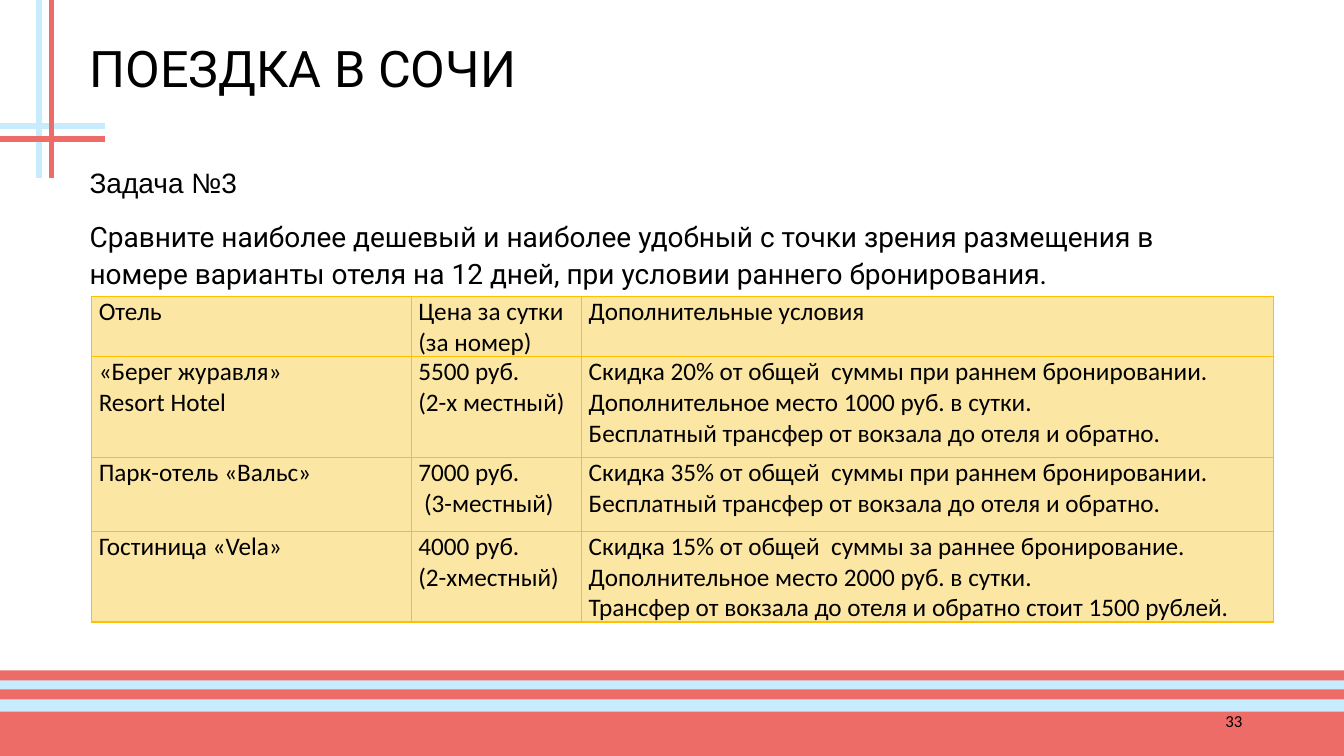
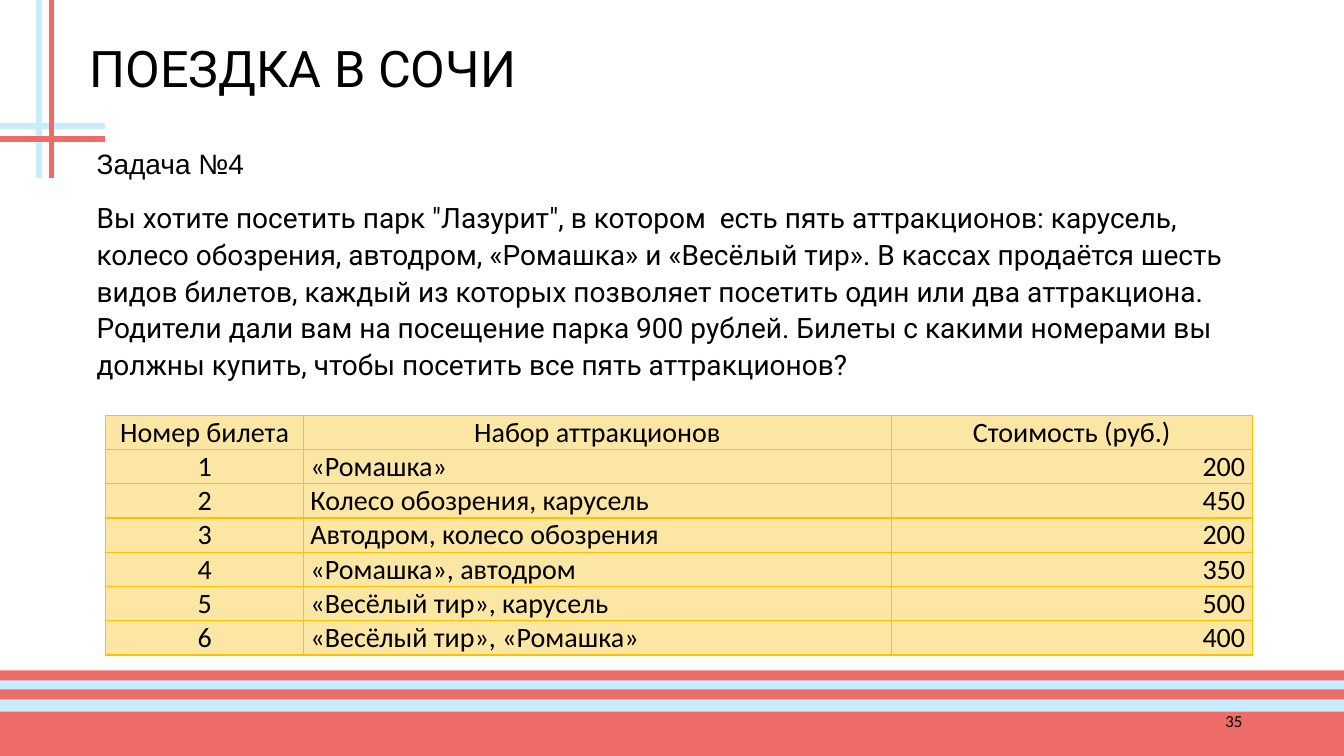
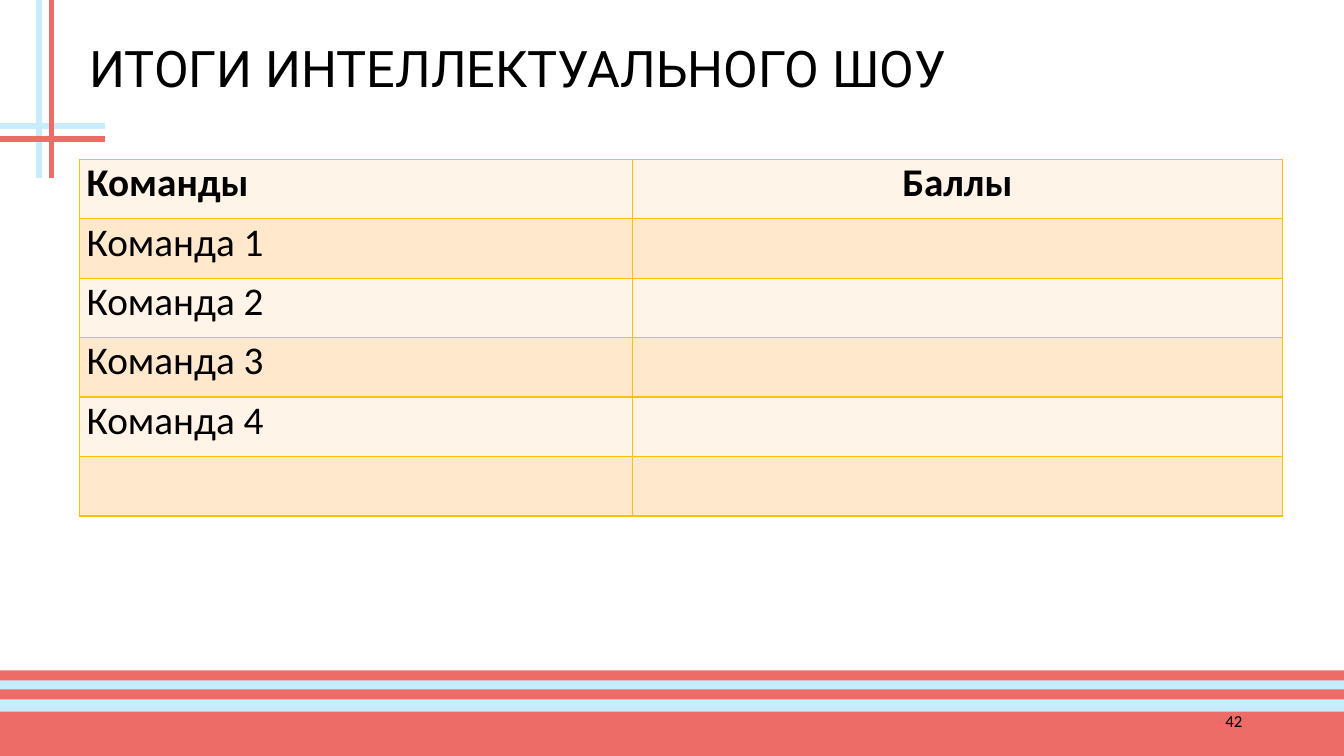
from pptx import Presentation
from pptx.dml.color import RGBColor
from pptx.enum.shapes import MSO_CONNECTOR, MSO_SHAPE
from pptx.enum.text import MSO_ANCHOR, PP_ALIGN
from pptx.oxml.ns import qn
from pptx.util import Inches, Pt
from lxml.etree import SubElement

COLORS = {
    "coral": "EE6C68", "sky": "C6ECFD", "black": "000000", "gold": "FFC000",
    "sand": "FCE6A3", "cream": "FFF4E7", "peach": "FFE8CC",
}
LEFT, CENTER, RIGHT = PP_ALIGN.LEFT, PP_ALIGN.CENTER, PP_ALIGN.RIGHT

# top, height, colour
BANDS = [(6.66, 0.86, "sky"), (7.06, 0.46, "coral"), (6.84, 0.1, "coral"), (6.65, 0.1, "coral")]
# x1, y1, x2, y2, colour
CROSS_LINES = [
    (0, 1.25, 1.04, 1.25, "sky"), (0.39, 0, 0.39, 1.77, "sky"),
    (0, 1.38, 1.04, 1.38, "coral"), (0.51, 0, 0.51, 1.77, "coral"),
]

TITLE_FORMAT = {"name": "Roboto", "size": Pt(36)}
HEADING_FORMAT = {"name": "Arial", "size": Pt(20)}
TASK_FORMAT = {"name": "Roboto", "size": Pt(20)}
NUMBER_FORMAT = {"name": "Calibri", "size": Pt(12)}

SLIDES = [
    {
        "title": "ПОЕЗДКА В СОЧИ",
        "number": "33",
        "task": {
            "place": (0.79, 1.56),
            "heading": "Задача №3",
            "text": [
                "Сравните наиболее дешевый и наиболее удобный c точки зрения размещения в номере "
                "варианты отеля на 12 дней, при условии раннего бронирования.",
            ],
        },
        "table": {
            "place": (0.91, 2.94),
            "columns": [3.17, 1.69, 6.86],
            "heights": [0.57, 1, 0.73, 0.88],
            "size": 18,
            "fills": ["sand"],
            "rows": [
                ["Отель", "Цена за сутки\n(за номер)", "Дополнительные условия"],
                ["«Берег журавля»\nResort Hotel", "5500 руб.\n(2-х местный)",
                 "Скидка 20% от общей  суммы при раннем бронировании.\n"
                 "Дополнительное место 1000 руб. в сутки.\n"
                 "Бесплатный трансфер от вокзала до отеля и обратно."],
                ["Парк-отель «Вальс»", "7000 руб.\n (3-местный)",
                 "Скидка 35% от общей  суммы при раннем бронировании. "
                 "Бесплатный трансфер от вокзала до отеля и обратно."],
                ["Гостиница «Vela»", "4000 руб.\n(2-хместный)",
                 "Скидка 15% от общей  суммы за раннее бронирование.\n"
                 "Дополнительное место 2000 руб. в сутки.\n"
                 "Трансфер от вокзала до отеля и обратно стоит 1500 рублей."],
            ],
        },
    },
    {
        "title": "ПОЕЗДКА В СОЧИ",
        "number": "35",
        "task": {
            "place": (0.86, 1.37),
            "heading": "Задача №4",
            "text": [
                "Вы хотите посетить парк \"Лазурит\", в котором  есть пять аттракционов: карусель, "
                "колесо обозрения, автодром, «Ромашка» и «Весёлый тир». В кассах продаётся шесть "
                "видов билетов, каждый из которых позволяет посетить один или два аттракциона.",
                "Родители дали вам на посещение парка 900 рублей. Билеты с какими номерами вы "
                "должны купить, чтобы посетить все пять аттракционов?",
            ],
        },
        "table": {
            "place": (1.05, 4.12),
            "columns": [1.96, 5.83, 3.58],
            "heights": [0.34] * 7,
            "size": 20,
            "fills": ["sand"],
            "header_align": [CENTER, CENTER, CENTER],
            "align": [CENTER, LEFT, RIGHT],
            "rows": [
                ["Номер билета", "Набор аттракционов", "Стоимость (руб.)"],
                ["1", "«Ромашка»", "200"],
                ["2", "Колесо обозрения, карусель", "450"],
                ["3", "Автодром, колесо обозрения", "200"],
                ["4", "«Ромашка», автодром", "350"],
                ["5", "«Весёлый тир», карусель", "500"],
                ["6", "«Весёлый тир», «Ромашка»", "400"],
            ],
        },
    },
    {
        "title": "ИТОГИ ИНТЕЛЛЕКТУАЛЬНОГО ШОУ",
        "number": "42",
        "table": {
            "place": (0.79, 1.58),
            "columns": [5.48, 6.45],
            "heights": [0.59] * 6,
            "size": 28,
            "fills": ["cream", "peach"],
            "bold_header": True,
            "spacing": 3,
            "header_align": [LEFT, CENTER],
            "rows": [
                ["Команды", "Баллы"],
                ["Команда 1", ""],
                ["Команда 2", ""],
                ["Команда 3", ""],
                ["Команда 4", ""],
                ["", ""],
            ],
        },
    },
]


def color(name):
    return RGBColor.from_string(COLORS[name])


def write(para, text, font, layout):
    """Put one formatted run in a paragraph; layout holds paragraph settings."""
    for name, value in layout.items():
        setattr(para, name, value)
    span = para.add_run()
    span.text = text
    for name, value in font.items():
        setattr(span.font, name, value)
    span.font.color.rgb = color("black")


def add_text(page, place, lines, anchor=MSO_ANCHOR.TOP):
    """Add a box; each line is (text, font, layout)."""
    frame = page.shapes.add_textbox(*map(Inches, place)).text_frame
    frame.word_wrap = True
    frame.vertical_anchor = anchor
    for index, line in enumerate(lines):
        para = frame.add_paragraph() if index else frame.paragraphs[0]
        write(para, *line)


def add_decoration(page, width):
    for top, height, name in BANDS:
        band = page.shapes.add_shape(MSO_SHAPE.RECTANGLE, 0, Inches(top), width, Inches(height))
        band.shadow.inherit = False
        band.fill.solid()
        band.fill.fore_color.rgb = color(name)
        band.line.fill.background()
    for *ends, name in CROSS_LINES:
        line = page.shapes.add_connector(MSO_CONNECTOR.STRAIGHT, *map(Inches, ends))
        line.line.color.rgb = color(name)
        line.line.width = Pt(4)
        SubElement(line._element.spPr, qn("a:effectLst"))


def add_borders(cell):
    properties = cell._tc.get_or_add_tcPr()
    for side in ("lnL", "lnR", "lnT", "lnB"):
        border = SubElement(properties, qn(f"a:{side}"), w=str(Pt(1)))
        fill = SubElement(border, qn("a:solidFill"))
        SubElement(fill, qn("a:srgbClr"), val=COLORS["gold"])


def fill_cell(cell, text, font, layout, fill):
    add_borders(cell)
    cell.fill.solid()
    cell.fill.fore_color.rgb = color(fill)
    cell.margin_left = cell.margin_right = Inches(0.07)
    cell.margin_top = cell.margin_bottom = 0
    for index, line in enumerate(text.split("\n") if text else []):
        frame = cell.text_frame
        para = frame.add_paragraph() if index else frame.paragraphs[0]
        write(para, line, font, layout)


def add_grid(page, data):
    rows, columns, heights = data["rows"], data["columns"], data["heights"]
    size = (sum(columns), sum(heights))
    table = page.shapes.add_table(len(rows), len(columns),
                                  *map(Inches, data["place"] + size)).table
    table.first_row = table.horz_banding = False
    for column, width in zip(table.columns, columns):
        column.width = Inches(width)
    for row, height in zip(table.rows, heights):
        row.height = Inches(height)

    body_align = data.get("align", [LEFT] * len(columns))
    header_align = data.get("header_align", body_align)
    for r, row in enumerate(rows):
        font = {"name": "Calibri", "size": Pt(data["size"]),
                "bold": r == 0 and data.get("bold_header", False)}
        fill = data["fills"][r % len(data["fills"])]
        for c, text in enumerate(row):
            layout = {"alignment": (body_align if r else header_align)[c]}
            if "spacing" in data:
                layout["space_after"] = Pt(data["spacing"])
                layout["space_before"] = Pt(data["spacing"])
            fill_cell(table.cell(r, c), text, font, layout, fill)


def add_page(deck, content):
    page = deck.slides.add_slide(deck.slide_layouts[6])
    add_decoration(page, deck.slide_width)
    add_text(page, (9.42, 6.95, 3, 0.4),
             [(content["number"], NUMBER_FORMAT, {"alignment": RIGHT})], MSO_ANCHOR.MIDDLE)
    add_text(page, (0.79, 0.39, 11.63, 0.73),
             [(content["title"], TITLE_FORMAT, {"line_spacing": 0.9})])
    if "task" in content:
        task = content["task"]
        lines = [(task["heading"], HEADING_FORMAT, {"line_spacing": 1.1, "space_after": Pt(12)})]
        lines += [(text, TASK_FORMAT, {"line_spacing": 1.1}) for text in task["text"]]
        add_text(page, task["place"] + (11.63, 4.61), lines)
    add_grid(page, content["table"])


def main():
    deck = Presentation()
    deck.slide_width, deck.slide_height = Inches(13.33), Inches(7.5)
    for content in SLIDES:
        add_page(deck, content)
    deck.save("out.pptx")


if __name__ == "__main__":
    main()
